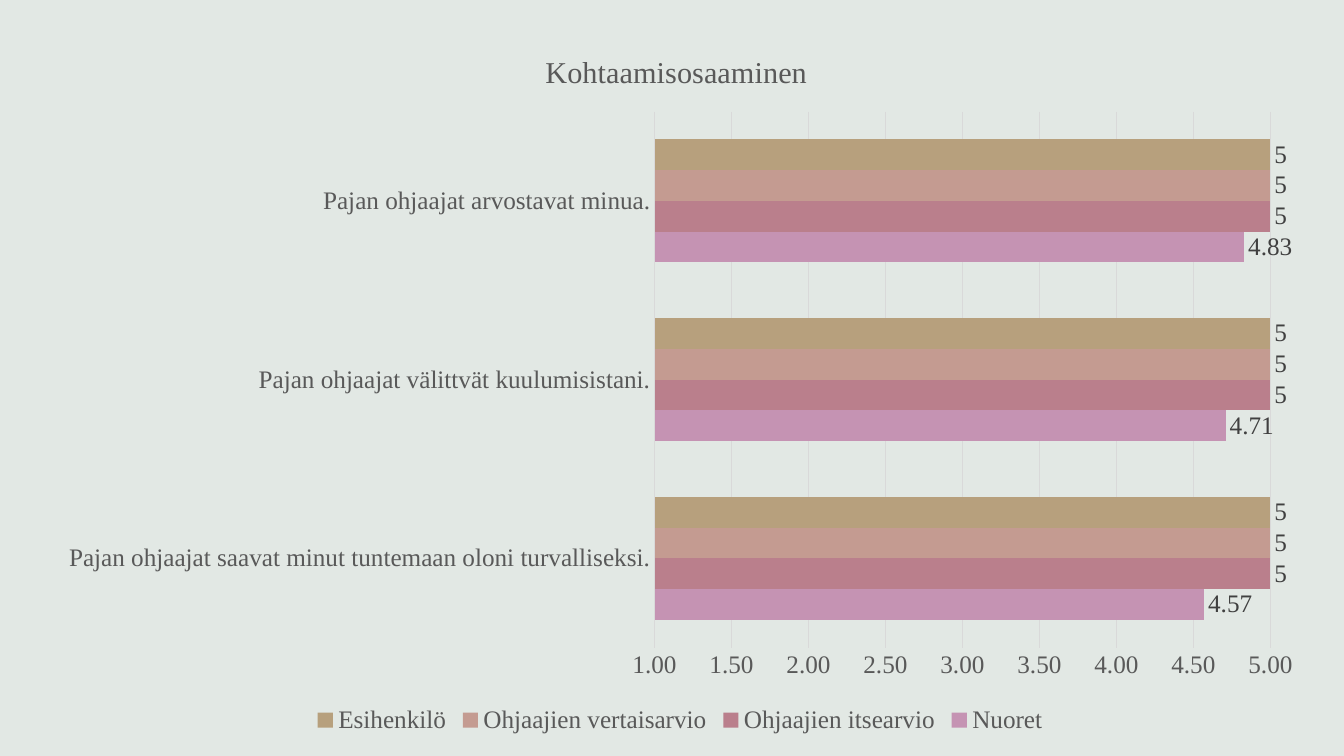
from pptx import Presentation
from pptx.chart.data import CategoryChartData
from pptx.dml.color import RGBColor
from pptx.enum.chart import (XL_CHART_TYPE, XL_LABEL_POSITION,
                             XL_LEGEND_POSITION, XL_TICK_MARK)
from pptx.oxml import parse_xml
from pptx.oxml.ns import nsdecls, qn
from pptx.util import Pt

EMU_PER_PX = 12192000 / 1344

CATEGORIES = [
    "Pajan ohjaajat saavat minut tuntemaan oloni turvalliseksi.",
    "Pajan ohjaajat välittvät kuulumisistani.",
    "Pajan ohjaajat arvostavat minua.",
]
# name, values, colour, label format
SERIES = [
    ("Nuoret", (4.57, 4.71, 4.83), "C593B3", "0.00"),
    ("Ohjaajien itsearvio", (5, 5, 5), "BA7F8C", "General"),
    ("Ohjaajien vertaisarvio", (5, 5, 5), "C49B91", "General"),
    ("Esihenkilö", (5, 5, 5), "B7A07D", "General"),
]


def px(n):
    return round(n * EMU_PER_PX)


def rgb(value):
    return RGBColor.from_string(value)


def place(element, target, **fractions):
    """Give a chart part a fixed place, in fractions of the chart frame."""
    layout = element.find(qn("c:layout"))
    if layout is not None:
        element.remove(layout)
    inner = f'<c:layoutTarget val="{target}"/>' if target else ""
    modes = "".join(f'<c:{k}Mode val="edge"/>' for k in "xy")
    sizes = "".join(f'<c:{k} val="{v}"/>' for k, v in fractions.items())
    new = parse_xml(f'<c:layout {nsdecls("c")}><c:manualLayout>{inner}{modes}{sizes}'
                    '</c:manualLayout></c:layout>')
    tx = element.find(qn("c:tx"))
    if tx is None:
        element.insert(0, new)
    else:
        tx.addnext(new)


class Deck:
    font = "Times New Roman"
    text, label, rule = "595959", "404040", "D9D9D9"
    size = 18

    def __init__(self, width, height, background):
        self.prs = Presentation()
        self.prs.slide_width, self.prs.slide_height = px(width), px(height)
        self.s = self.prs.slides.add_slide(self.prs.slide_layouts[6])
        fill = self.s.background.fill
        fill.solid()
        fill.fore_color.rgb = rgb(background)

    def style(self, font, color, size=size):
        font.name, font.size, font.bold = self.font, Pt(size), False
        font.color.rgb = rgb(color)

    def line(self, line):
        line.color.rgb, line.width = rgb(self.rule), Pt(0.75)

    def bar_chart(self, x, y, w, h, title):
        data = CategoryChartData()
        data.categories = CATEGORIES
        for name, values, _, _ in SERIES:
            data.add_series(name, values)
        chart = self.s.shapes.add_chart(XL_CHART_TYPE.BAR_CLUSTERED,
                                        px(x), px(y), px(w), px(h), data).chart
        self.style(chart.font, "000000")
        self.title(chart, title)
        self.axes(chart)
        self.series(chart.plots[0])
        chart.has_legend = True
        chart.legend.position = XL_LEGEND_POSITION.BOTTOM
        chart.legend.include_in_layout = False
        self.style(chart.legend.font, self.text)
        plot_area = chart.plots[0]._element.getparent()
        place(plot_area, "inner", x=0.48, y=0.12, w=0.4835, h=0.752)

    def title(self, chart, text):
        chart.has_title = True
        tf = chart.chart_title.text_frame
        tf.text = text
        self.style(tf.paragraphs[0].font, self.text, 21.6)
        chart.chart_title.include_in_layout = False
        place(chart.chart_title._element, None, x=0.39, y=0.03)

    def axes(self, chart):
        for axis in (chart.category_axis, chart.value_axis):
            axis.major_tick_mark = axis.minor_tick_mark = XL_TICK_MARK.NONE
            self.style(axis.tick_labels.font, self.text)
        self.line(chart.category_axis.format.line)
        scale = chart.value_axis
        scale.minimum_scale, scale.maximum_scale, scale.major_unit = 1, 5, 0.5
        scale.format.line.fill.background()
        self.line(scale.major_gridlines.format.line)
        scale.tick_labels.number_format = "0.00"
        scale.tick_labels.number_format_is_linked = False

    def series(self, plot):
        plot.gap_width, plot.overlap, plot.vary_by_categories = 182, 0, False
        for ser, (_, _, color, number_format) in zip(plot.series, SERIES):
            ser.format.fill.solid()
            ser.format.fill.fore_color.rgb = rgb(color)
            labels = ser.data_labels
            labels.show_value = True
            labels.position = XL_LABEL_POSITION.OUTSIDE_END
            labels.number_format = number_format
            labels.number_format_is_linked = False
            self.style(labels.font, self.label)


def main():
    deck = Deck(1344, 756, "E2E8E4")
    deck.bar_chart(43, 26, 1274, 713, "Kohtaamisosaaminen")
    deck.prs.save("out.pptx")


if __name__ == "__main__":
    main()
